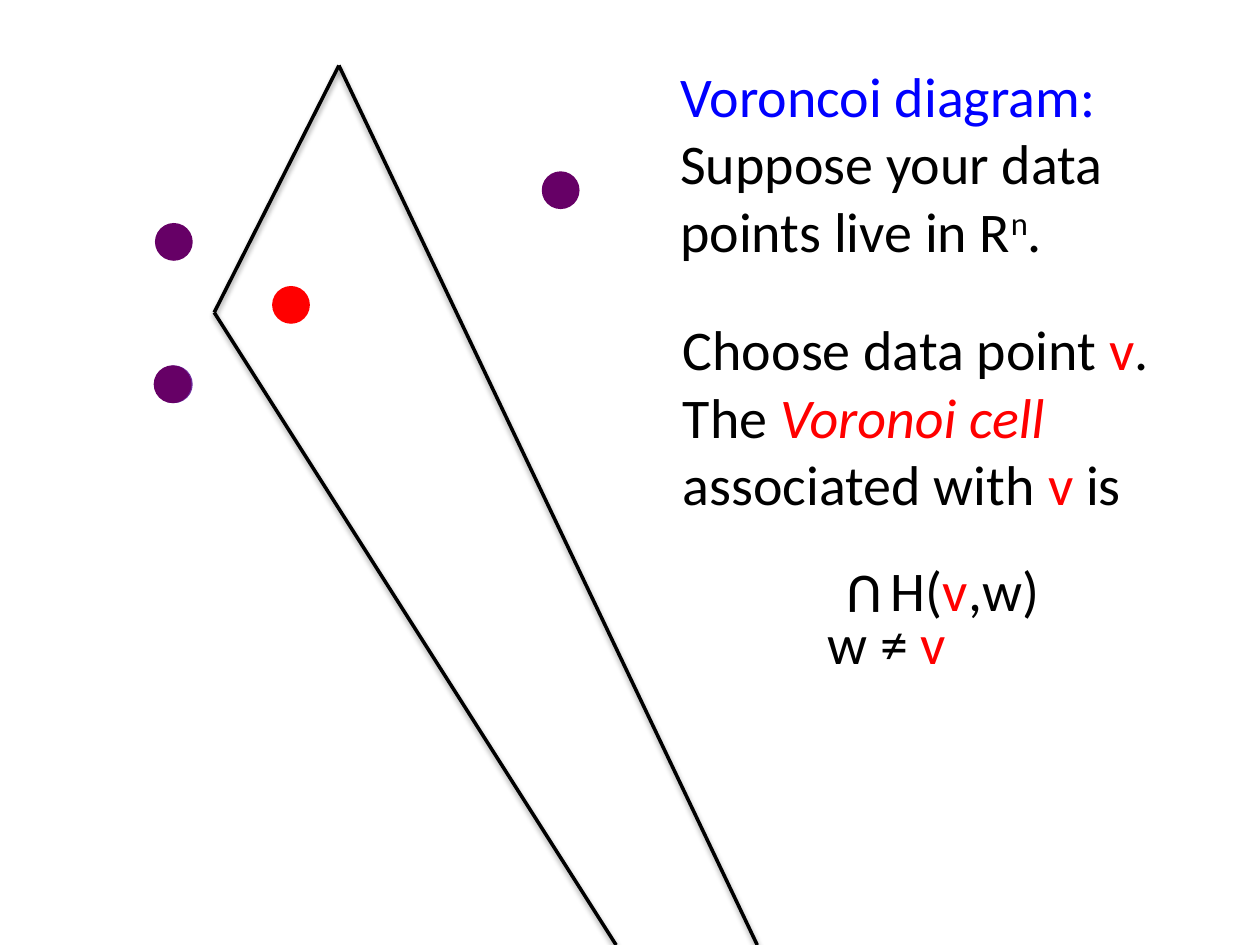
from itertools import pairwise

from lxml.etree import SubElement
from pptx import Presentation
from pptx.dml.color import RGBColor
from pptx.enum.shapes import MSO_CONNECTOR, MSO_SHAPE
from pptx.enum.text import PP_ALIGN
from pptx.oxml.ns import qn
from pptx.util import Inches, Pt

BLACK, RED, BLUE, PURPLE, VIOLET = "000000", "FF0000", "0000FF", "660066", "7030A0"
POINT_SIZE = 0.3
DATA_POINTS = [
    (1.23, 2.9, VIOLET),
    (1.22, 2.9, PURPLE),
    (2.16, 2.27, RED),
    (1.23, 1.77, PURPLE),
    (4.3, 1.36, PURPLE),
]
CELL_CORNERS = [(4.89, 7.5), (1.7, 2.48), (2.69, 0.52), (6.01, 7.5)]


def color(hex_value):
    return RGBColor.from_string(hex_value)


def add_soft_shadow(line):
    effects = SubElement(line._element.spPr, qn("a:effectLst"))
    shadow = SubElement(effects, qn("a:outerShdw"), blurRad=str(Pt(3.1)),
                        dist=str(Pt(1.6)), dir="5400000", rotWithShape="0")
    tint = SubElement(shadow, qn("a:srgbClr"), val=BLACK)
    SubElement(tint, qn("a:alpha"), val="38000")


def add_data_points(slide, points):
    for left, top, fill in points:
        point = slide.shapes.add_shape(
            MSO_SHAPE.OVAL, Inches(left), Inches(top), Inches(POINT_SIZE), Inches(POINT_SIZE))
        point.shadow.inherit = False
        point.fill.solid()
        point.fill.fore_color.rgb = color(fill)
        point.line.fill.background()


def add_voronoi_cell(slide, corners):
    """Join successive corners; the cell stays open at the slide's bottom edge."""
    for (x1, y1), (x2, y2) in pairwise(corners):
        edge = slide.shapes.add_connector(
            MSO_CONNECTOR.STRAIGHT, Inches(x1), Inches(y1), Inches(x2), Inches(y2))
        edge.line.color.rgb = color(BLACK)
        edge.line.width = Pt(2)
        add_soft_shadow(edge)


def add_text(slide, box, paragraphs):
    """Each paragraph is a list of (text, colour) runs."""
    textbox = slide.shapes.add_textbox(*(Inches(length) for length in box))
    frame = textbox.text_frame
    frame.word_wrap = True
    for index, pieces in enumerate(paragraphs):
        paragraph = frame.add_paragraph() if index else frame.paragraphs[0]
        for words, ink in pieces:
            run = paragraph.add_run()
            run.text = words
            run.font.name = "Calibri"
            run.font.size = Pt(32)
            run.font.color.rgb = color(ink)
    return textbox


def add_introduction(slide, box):
    introduction = add_text(slide, box, [
        [("Voroncoi diagram:", BLUE)],
        [("Suppose your data points live in R", BLACK), ("n", BLACK), (".", BLACK)],
    ])
    exponent = introduction.text_frame.paragraphs[1].runs[1]
    exponent.font._element.set("baseline", "30000")


def add_cell_definition(slide, box):
    """Definition text, with the intersection sign and its index below."""
    left, top, width, height = box
    definition = add_text(slide, box, [
        [("Choose data point ", BLACK), ("v", RED), (".", BLACK)],
        [("The ", BLACK), ("Voronoi cell ", RED), ("associated with ", BLACK),
         ("v", RED), (" is", BLACK)],
        [("H(", BLACK), ("v", RED), (",w)", BLACK)],
    ])
    _, statement, formula = definition.text_frame.paragraphs
    statement.runs[1].font.italic = True
    formula.alignment = PP_ALIGN.CENTER
    formula.space_before = Pt(22)

    intersection = add_text(slide, (left + 1.44, top + 1.98, 0.34, 0.64), [[("U", BLACK)]])
    intersection.rotation = 180
    add_text(slide, (left + 1.15, top + 2.33, 1.82, 0.64), [[("w ≠ ", BLACK), ("v", RED)]])


def main():
    presentation = Presentation()
    presentation.slide_width, presentation.slide_height = Inches(10), Inches(7.5)
    slide = presentation.slides.add_slide(presentation.slide_layouts[6])
    add_data_points(slide, DATA_POINTS)
    add_voronoi_cell(slide, CELL_CORNERS)
    add_cell_definition(slide, (5.32, 2.45, 4.68, 2.64))
    add_introduction(slide, (5.3, 0.44, 4.19, 1.72))
    presentation.save("out.pptx")


if __name__ == "__main__":
    main()
